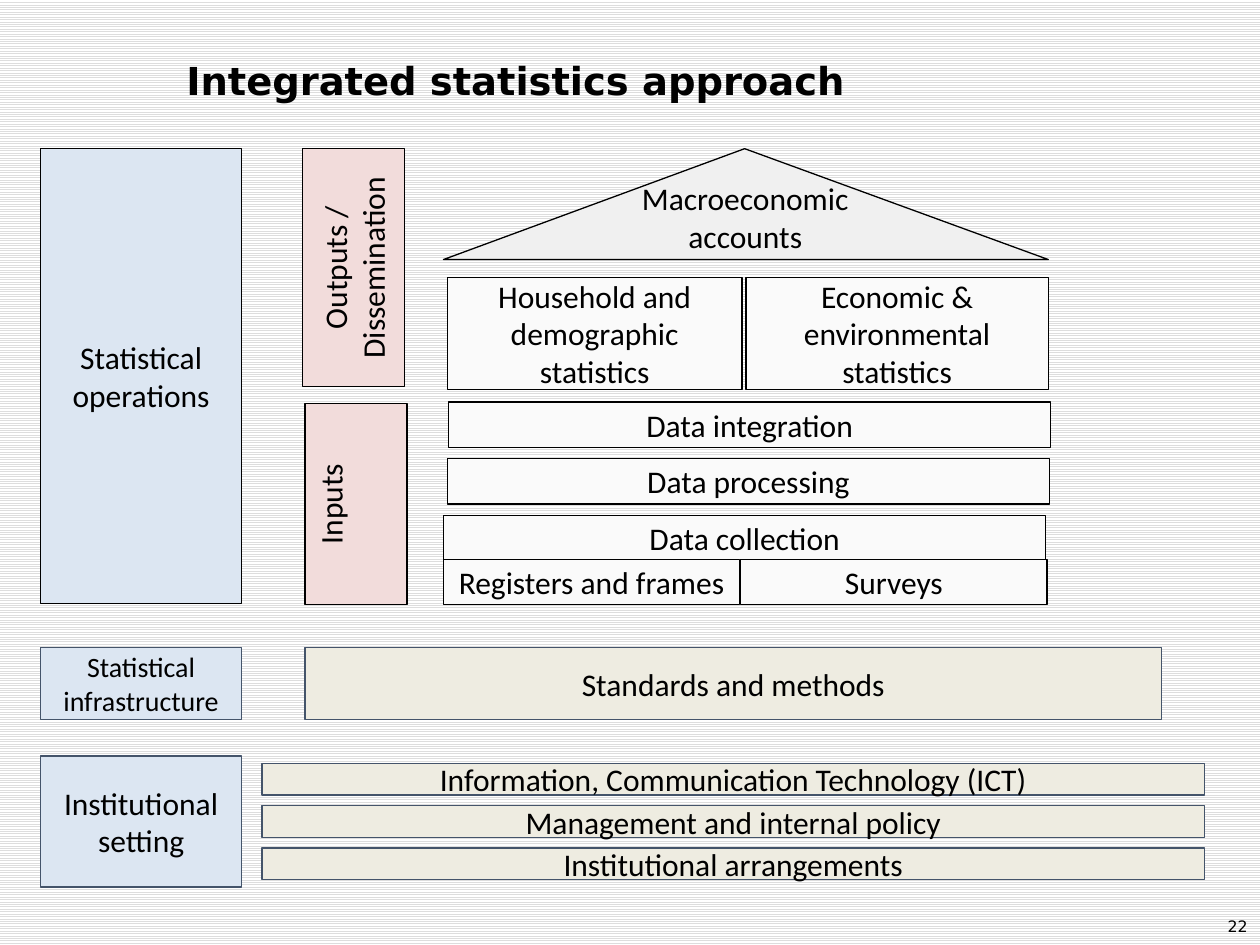
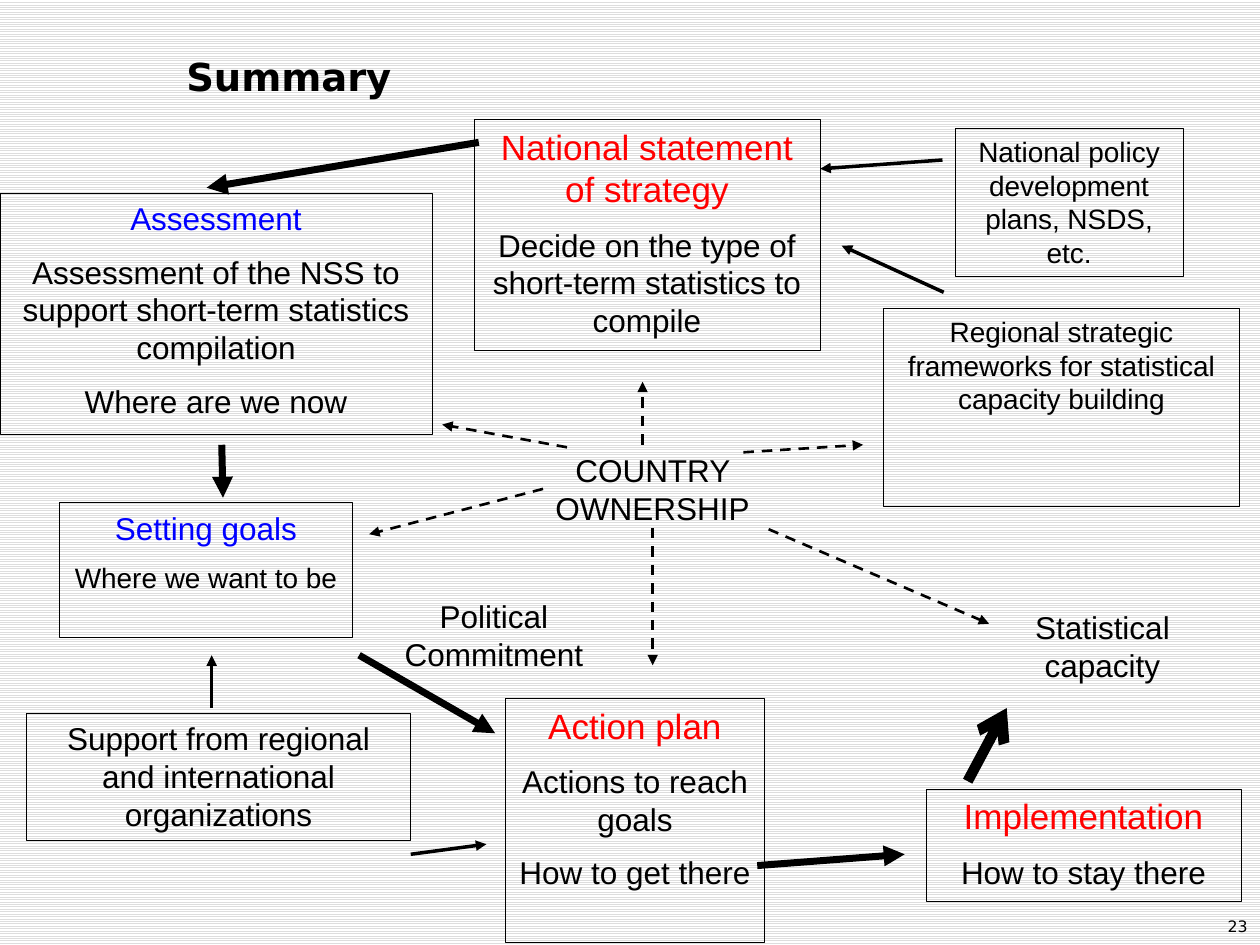
from dataclasses import dataclass

from lxml import etree
from pptx import Presentation
from pptx.dml.color import RGBColor
from pptx.enum.dml import MSO_LINE, MSO_PATTERN
from pptx.enum.shapes import MSO_CONNECTOR, MSO_SHAPE
from pptx.enum.text import MSO_ANCHOR, PP_ALIGN
from pptx.oxml import parse_xml
from pptx.oxml.ns import nsdecls, qn
from pptx.util import Inches, Pt

RECTANGLE = MSO_SHAPE.RECTANGLE
TRIANGLE = MSO_SHAPE.ISOSCELES_TRIANGLE
STRAIGHT = MSO_CONNECTOR.STRAIGHT
TOP, MIDDLE, BOTTOM = MSO_ANCHOR.TOP, MSO_ANCHOR.MIDDLE, MSO_ANCHOR.BOTTOM
LEFT, CENTER, RIGHT = PP_ALIGN.LEFT, PP_ALIGN.CENTER, PP_ALIGN.RIGHT

COLUMNS, ROWS = 100, 75  # square grid cells of a tenth of an inch


@dataclass(frozen=True)
class Theme:
    black: str = "000000"
    white: str = "FFFFFF"
    stripe: str = "DDDDDD"
    slate: str = "44546A"
    level: str = "DCE6F2"
    phase: str = "F2DCDB"
    stage: str = "FAFAFA"
    roof: str = "F0F0F0"
    foundation: str = "EEECE1"
    blue: str = "0000FF"
    red: str = "FF0000"
    heading_font: str = "DejaVu Sans"
    house_font: str = "Calibri"
    flow_font: str = "Arial"
    title: int = 22
    large: int = 20
    body: int = 18
    small: int = 16
    number: int = 9
    thin: float = 0.25
    edge: float = 0.75
    dashed: float = 1.5
    support: float = 2
    step: float = 4
    final_step: float = 6


THEME = Theme()


def cells(*counts):
    return [Inches(count / 10) for count in counts]


def color(value):
    return RGBColor.from_string(value)


def write(shape, lines, font, align=CENTER, anchor=TOP, bold=False):
    """Fill a shape with (text, size, colour) paragraphs."""
    frame = shape.text_frame
    frame.word_wrap = True
    frame.vertical_anchor = anchor
    for index, (text, size, ink) in enumerate(lines):
        paragraph = frame.paragraphs[0] if index == 0 else frame.add_paragraph()
        paragraph.text = text
        paragraph.alignment = align
        if index:
            paragraph.space_before = Pt(size / 2)
        paragraph.font.name = font
        paragraph.font.size = Pt(size)
        paragraph.font.bold = bold
        paragraph.font.color.rgb = color(ink)


def add_label(slide, place, text, size, font=THEME.flow_font, **layout):
    label = slide.shapes.add_textbox(*cells(*place))
    write(label, [(text, size, THEME.black)], font, **layout)


def add_box(slide, place, fill=None, line=THEME.black, width=THEME.edge,
            kind=RECTANGLE):
    box = slide.shapes.add_shape(kind, *cells(*place))
    box.shadow.inherit = False
    if fill:
        box.fill.solid()
        box.fill.fore_color.rgb = color(fill)
    else:
        box.fill.background()
    box.line.color.rgb = color(line)
    box.line.width = Pt(width)
    return box


def add_block(slide, place, text, fill, line=THEME.black, size=THEME.body,
              kind=RECTANGLE, anchor=MIDDLE):
    """Add a filled block of the statistics house."""
    block = add_box(slide, place, fill, line, kind=kind)
    write(block, [(text, size, THEME.black)], THEME.house_font, anchor=anchor)
    return block


def add_phase(slide, place, text, anchor):
    """Add a block whose text reads upwards."""
    phase = add_block(slide, place, text, THEME.phase, anchor=anchor)
    frame = phase.text_frame
    frame.margin_left = frame.margin_right = Inches(0.1)
    frame.margin_top = frame.margin_bottom = Inches(0.1)
    frame._txBody.bodyPr.set("vert", "vert270")


def add_flow_box(slide, place, *lines):
    box = add_box(slide, place, width=THEME.thin)
    write(box, lines, THEME.flow_font)


def add_arrow(slide, start, end, width, dashed=False, head="triangle"):
    arrow = slide.shapes.add_connector(STRAIGHT, *cells(*start, *end))
    arrow.line.color.rgb = color(THEME.black)
    arrow.line.width = Pt(width)
    if dashed:
        arrow.line.dash_style = MSO_LINE.DASH
    properties = arrow._element.spPr
    tail = etree.SubElement(properties.find(qn("a:ln")), qn("a:tailEnd"))
    tail.set("type", head)
    properties.append(parse_xml(f"<a:effectLst {nsdecls('a')}/>"))


def add_page(presentation, title, title_top, number):
    """Add a striped slide with its title and number."""
    slide = presentation.slides.add_slide(presentation.slide_layouts[6])
    fill = slide.background.fill
    fill.patterned()
    fill.pattern = MSO_PATTERN.LIGHT_HORIZONTAL
    fill.fore_color.rgb = color(THEME.stripe)
    fill.back_color.rgb = color(THEME.white)
    add_label(slide, (13.8, title_top, 80.5, 7), title, THEME.title,
              THEME.heading_font, align=LEFT, anchor=BOTTOM, bold=True)
    add_label(slide, (COLUMNS - 23.3, 71.5, 23.3, 4), number, THEME.number,
              THEME.heading_font, align=RIGHT, anchor=MIDDLE)
    return slide


def add_levels(slide):
    levels = (
        ("Statistical operations", 11.8, 36.1, THEME.black, THEME.body),
        ("Statistical infrastructure", 51.4, 5.7, THEME.slate, THEME.small),
        ("Institutional setting", 60, 10.4, THEME.slate, THEME.body),
    )
    for text, top, height, line, size in levels:
        add_block(slide, (3.2, top, 16, height), text, THEME.level, line, size)


def add_house(slide):
    roof = add_block(slide, (35.2, 11.8, 48, 8.8), "Macroeconomic\vaccounts",
                     THEME.roof, kind=TRIANGLE)
    roof.adjustments[0] = 0.498
    roof.text_frame.margin_bottom = Inches(0.28)
    rooms = (
        ("Household and demographic statistics", 35.5, 22, 23.4, 8.9),
        ("Economic & environmental\vstatistics", 59.2, 22, 24, 8.9),
        ("Registers and frames", 35.2, 44.4, 23.5, 3.6),
        ("Surveys", 58.8, 44.4, 24.3, 3.6),
    )
    stages = (("Data integration", 35.6), ("Data processing", 35.5),
              ("Data collection", 35.2))
    for index, (text, left) in enumerate(stages):
        add_block(slide, (left, 31.9 + 4.5 * index, 47.8, 3.6), text, THEME.stage)
    for text, *place in rooms:
        add_block(slide, place, text, THEME.stage)


def add_foundations(slide):
    add_block(slide, (24.2, 51.4, 68, 5.7), "Standards and methods",
              THEME.foundation, THEME.slate)
    settings = ("Information, Communication Technology (ICT)",
                "Management and internal policy", "Institutional arrangements")
    for index, text in enumerate(settings):
        add_block(slide, (20.8, 60.6 + 3.35 * index, 74.8, 2.5), text,
                  THEME.foundation, THEME.slate)


def build_approach(presentation):
    slide = add_page(presentation, "Integrated statistics approach", 1.7, "22")
    add_levels(slide)
    add_phase(slide, (24, 11.8, 8.1, 18.9), "Outputs / Dissemination", MIDDLE)
    add_phase(slide, (24.2, 32, 8.1, 16), "Inputs", TOP)
    add_house(slide)
    add_foundations(slide)


def add_flow_boxes(slide):
    black, blue, red = THEME.black, THEME.blue, THEME.red
    large, body, small = THEME.large, THEME.body, THEME.small
    add_flow_box(slide, (37.6, 9.5, 27.5, 18.3),
                 ("National statement of strategy", large, red),
                 ("Decide on the type of short-term statistics to compile",
                  body, black))
    add_flow_box(slide, (0, 15.3, 34.3, 19.2),
                 ("Assessment", body, blue),
                 ("Assessment of the NSS to support short-term statistics "
                  "compilation", body, black),
                 ("Where are we now", body, black))
    add_flow_box(slide, (4.7, 39.9, 23.3, 10.7),
                 ("Setting goals", body, blue),
                 ("Where we want to be", small, black))
    add_flow_box(slide, (40.1, 55.4, 20.6, 19.4),
                 ("Action plan", large, red),
                 ("Actions to reach goals", body, black),
                 ("How to get there", body, black))
    add_flow_box(slide, (73.5, 62.6, 25, 8.9),
                 ("Implementation", large, red),
                 ("How to stay there", body, black))
    add_flow_box(slide, (75.8, 10.2, 18.1, 11.7),
                 ("National policy development plans, NSDS, etc.", small, black))
    add_flow_box(slide, (70.1, 24.5, 28.3, 15.7),
                 ("Regional strategic frameworks for statistical capacity "
                  "building", small, black))
    add_flow_box(slide, (2.1, 56.6, 30.5, 10.1),
                 ("Support from regional and international organizations",
                  body, black))


def add_flow_arrows(slide):
    ownership = (
        ((51, 35.3), (51, 30.3)), ((61, 42), (78.5, 49.5)),
        ((51.8, 41.9), (51.8, 52.8)), ((43.1, 38.8), (29.3, 42.4)),
        ((45, 35.5), (35.1, 33.7)), ((59, 35.9), (68.5, 35.3)),
    )
    support = (
        ((16.8, 56.2), (16.8, 52)), ((32.6, 67.8), (38.6, 67)),
        ((74.8, 12.7), (65.1, 13.4)), ((74.9, 23.2), (66.8, 19.5)),
    )
    steps = (
        ((38, 11.3), (16.4, 14.9)), ((17.6, 35.3), (17.7, 39.5)),
        ((28.5, 52), (39.3, 58.2)), ((60.1, 68.7), (71.8, 67.8)),
    )
    for start, end in ownership:
        add_arrow(slide, start, end, THEME.dashed, dashed=True)
    for arrows, width in ((support, THEME.support), (steps, THEME.step)):
        for start, end in arrows:
            add_arrow(slide, start, end, width)
    add_arrow(slide, (76.8, 62), (79.9, 56.2), THEME.final_step, head="arrow")


def build_summary(presentation):
    slide = add_page(presentation, "Summary", 1.4, "23")
    add_flow_boxes(slide)
    labels = (("COUNTRY OWNERSHIP", 40.1, 35.3, 23.4),
              ("Political Commitment", 30.5, 46.9, 17.4),
              ("Statistical capacity", 79.3, 47.8, 16.4))
    for text, left, top, width in labels:
        add_label(slide, (left, top, width, 7), text, THEME.body)
    add_flow_arrows(slide)


def main():
    presentation = Presentation()
    presentation.slide_width, presentation.slide_height = cells(COLUMNS, ROWS)
    build_approach(presentation)
    build_summary(presentation)
    presentation.save("out.pptx")


if __name__ == "__main__":
    main()
